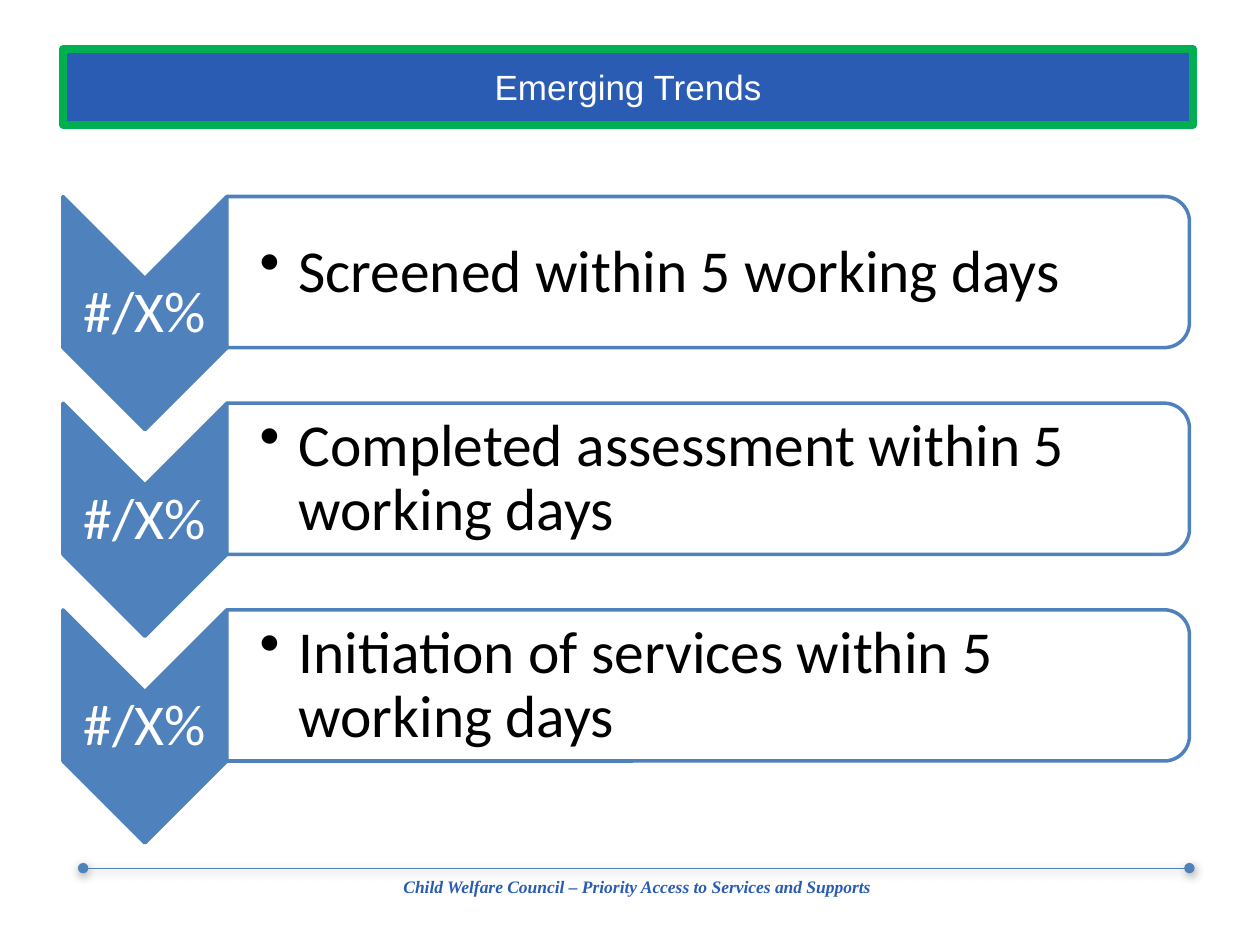
import dataclasses
import typing

import lxml.etree
import pptx
import pptx.dml.color
import pptx.enum.shapes
import pptx.enum.text
import pptx.oxml
import pptx.oxml.ns
import pptx.util

Inches = pptx.util.Inches
SHAPE = pptx.enum.shapes.MSO_SHAPE
ALIGN = pptx.enum.text.PP_ALIGN
ANCHOR = pptx.enum.text.MSO_ANCHOR
qn = pptx.oxml.ns.qn


@dataclasses.dataclass(frozen=True)
class TextStyle:
    font: str
    size: float
    color: str
    emphasis: bool = False


@dataclasses.dataclass(frozen=True)
class Theme:
    blue: str = "4F81BD"
    banner: str = "295CB2"
    green: str = "00B050"
    white: str = "FFFFFF"
    title: TextStyle = TextStyle("Arial", 20, "FFFFFF")
    footer: TextStyle = TextStyle("Times New Roman", 10, "295CB2", True)
    measure: TextStyle = TextStyle("Calibri", 33, "FFFFFF")
    trend: TextStyle = TextStyle("Calibri", 34, "000000")


class Box(typing.NamedTuple):
    left: float
    top: float
    width: float
    height: float

    def lengths(self) -> list:
        return [Inches(value) for value in self]

    def turned(self) -> "Box":
        """The unrotated box that covers this one after a quarter turn."""
        shift = (self.width - self.height) / 2
        return Box(self.left + shift, self.top - shift, self.height, self.width)


@dataclasses.dataclass(frozen=True)
class Trend:
    measure: str
    text: str


THEME = Theme()
TRENDS = [
    Trend("#/X%", "Screened within 5 working days"),
    Trend("#/X%", "Completed assessment within 5 working days"),
    Trend("#/X%", "Initiation of services within 5 working days"),
]
FIRST_TOP, ROW_STEP = 1.56, 1.64


def rgb(color: str) -> pptx.dml.color.RGBColor:
    return pptx.dml.color.RGBColor.from_string(color)


def add_block(shapes, kind, box: Box, fill: str, line: str, line_width: float,
              rotation: float = 0):
    shape = shapes.add_shape(kind, *box.lengths())
    shape.shadow.inherit = False
    shape.rotation = rotation
    shape.fill.solid()
    shape.fill.fore_color.rgb = rgb(fill)
    shape.line.color.rgb = rgb(line)
    shape.line.width = pptx.util.Pt(line_width)
    return shape


def write(frame, text: str, style: TextStyle, alignment=ALIGN.CENTER):
    frame.word_wrap = True
    paragraph = frame.paragraphs[0]
    paragraph.alignment = alignment
    run = paragraph.add_run()
    run.text = text
    run.font.name = style.font
    run.font.size = pptx.util.Pt(style.size)
    run.font.color.rgb = rgb(style.color)
    run.font.bold = run.font.italic = style.emphasis
    return paragraph


def add_label(shapes, box: Box, text: str, style: TextStyle, alignment,
              left_inset: float = 0.02):
    frame = shapes.add_textbox(*box.lengths()).text_frame
    frame.vertical_anchor = ANCHOR.MIDDLE
    frame.margin_left = Inches(left_inset)
    frame.margin_top = frame.margin_right = frame.margin_bottom = Inches(0.02)
    paragraph = write(frame, text, style, alignment)
    paragraph.line_spacing = 0.9
    return paragraph


def add_bullet(paragraph, indent: float) -> None:
    paragraph.level = 1
    properties = paragraph._p.get_or_add_pPr()
    properties.set("marL", str(Inches(indent)))
    properties.set("indent", str(-Inches(indent)))
    lxml.etree.SubElement(properties, qn("a:buChar")).set("char", "•")


def add_trend(slide, trend: Trend, top: float) -> None:
    shapes = slide.shapes.add_group_shape().shapes
    add_block(shapes, SHAPE.CHEVRON, Box(0.5, top, 1.3, 1.85).turned(),
              THEME.blue, THEME.blue, 2, 90)
    add_label(shapes, Box(0.5, top + 0.65, 1.3, 0.56), trend.measure,
              THEME.measure, ALIGN.CENTER)
    panel = add_block(shapes, SHAPE.ROUND_2_SAME_RECTANGLE,
                      Box(1.8, top, 7.64, 1.2).turned(),
                      THEME.white, THEME.blue, 2, 90)
    color = panel._element.spPr.find(qn("a:solidFill"))[0]
    lxml.etree.SubElement(color, qn("a:alpha")).set("val", "90000")
    paragraph = add_label(shapes, Box(1.8, top + 0.06, 7.58, 1.09), trend.text,
                          THEME.trend, ALIGN.LEFT, 0.26)
    add_bullet(paragraph, 0.31)


def add_footer_rule(slide) -> None:
    rule = slide.shapes.add_connector(
        pptx.enum.shapes.MSO_CONNECTOR.STRAIGHT,
        Inches(0.66), Inches(6.89), Inches(9.44), Inches(6.89))
    rule.line.color.rgb = rgb(THEME.blue)
    rule.line.width = pptx.util.Pt(0.25)
    for end in ("a:headEnd", "a:tailEnd"):
        lxml.etree.SubElement(rule.line._get_or_add_ln(), qn(end)).set("type", "oval")
    # Soft shadow below the rule
    rule._element.spPr.append(pptx.oxml.parse_xml(
        '<a:effectLst xmlns:a="http://schemas.openxmlformats.org/drawingml/2006/main">'
        '<a:outerShdw blurRad="63500" dist="20320" dir="5400000" rotWithShape="0">'
        '<a:srgbClr val="000000"><a:alpha val="38000"/></a:srgbClr>'
        '</a:outerShdw></a:effectLst>'))


def main() -> None:
    presentation = pptx.Presentation()
    presentation.slide_width = Inches(10)
    presentation.slide_height = Inches(7.5)
    slide = presentation.slides.add_slide(presentation.slide_layouts[6])

    # Title banner
    banner = add_block(slide.shapes, SHAPE.RECTANGLE, Box(0.5, 0.39, 8.97, 0.6),
                       THEME.banner, THEME.green, 4.5)
    banner.text_frame.vertical_anchor = ANCHOR.MIDDLE
    write(banner.text_frame, "Emerging Trends", THEME.title)

    # Footer
    add_footer_rule(slide)
    footer = slide.shapes.add_textbox(*Box(0.66, 6.9, 8.79, 0.27).lengths())
    footer.text_frame.auto_size = pptx.enum.text.MSO_AUTO_SIZE.SHAPE_TO_FIT_TEXT
    write(footer.text_frame,
          "Child Welfare Council – Priority Access to Services and Supports",
          THEME.footer)

    # Trend rows
    for index, trend in enumerate(TRENDS):
        add_trend(slide, trend, FIRST_TOP + index * ROW_STEP)

    presentation.save("out.pptx")


if __name__ == "__main__":
    main()
